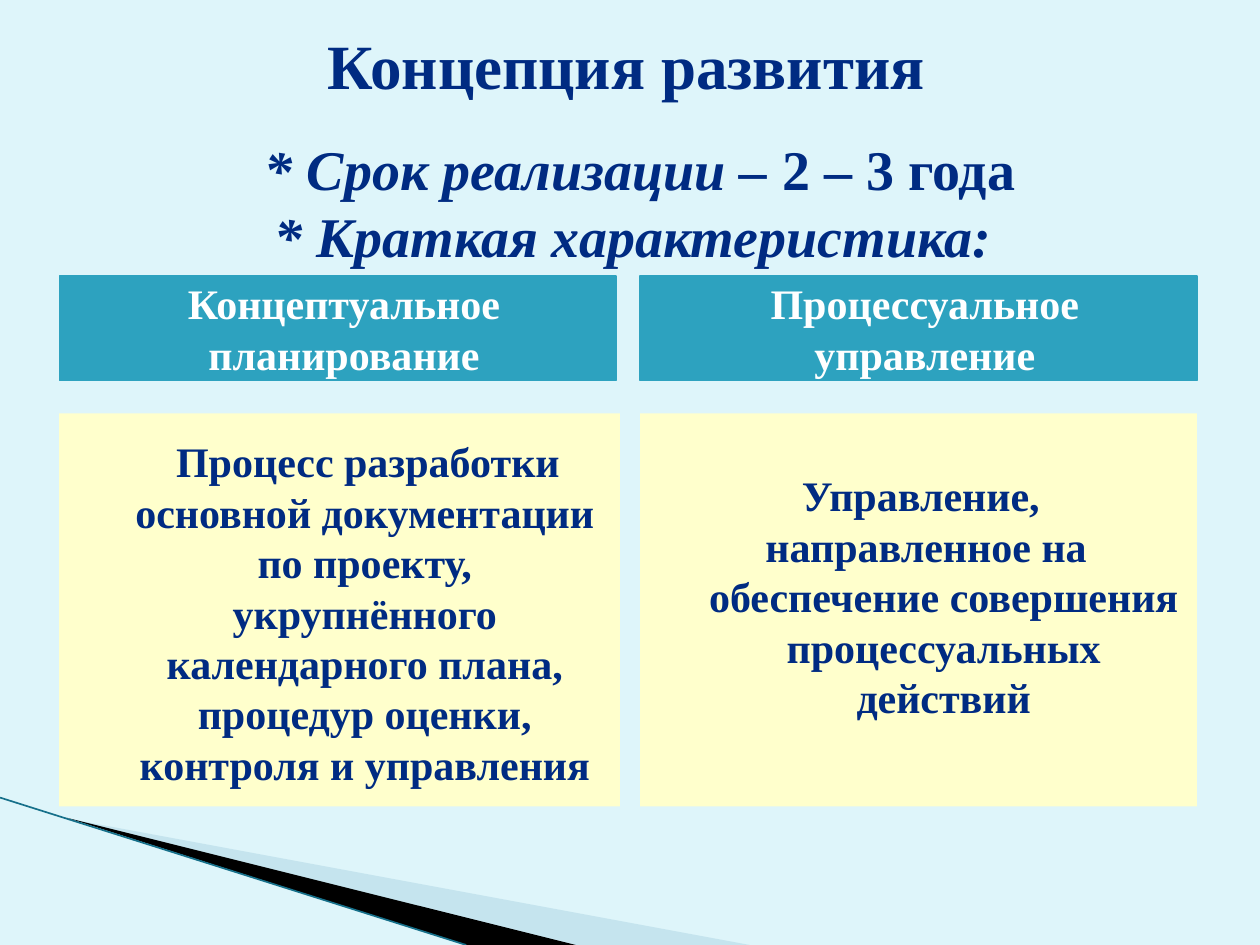
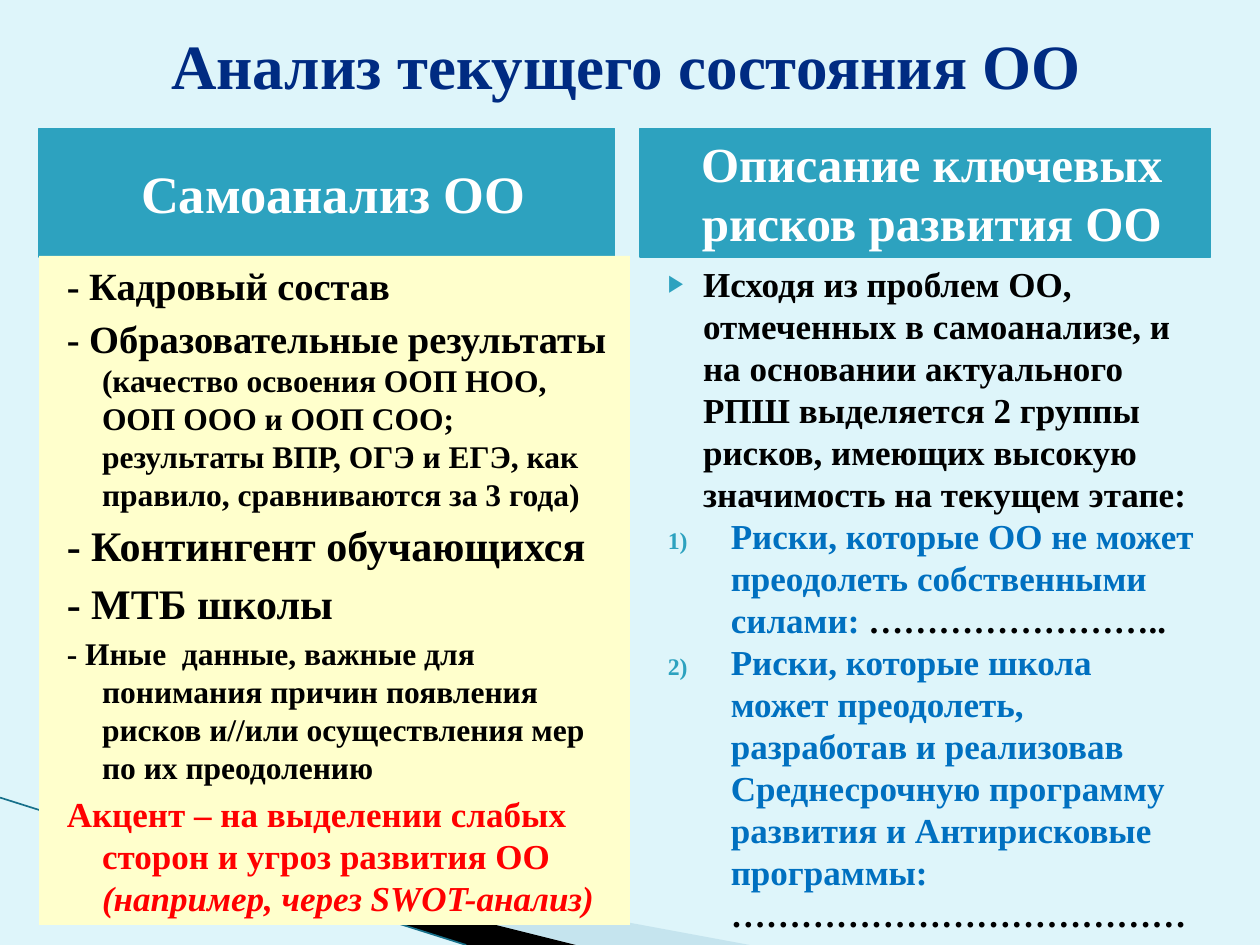
from lxml import etree
from pptx import Presentation
from pptx import util as u
from pptx.dml.color import RGBColor
from pptx.enum import shapes, text
from pptx.oxml.ns import qn

FONT = "Times New Roman"
NAVY, TEAL, CREAM, SKY = "002B82", "2DA2BF", "FFFFCC", "DEF5FA"
WHITE, BLACK, RED, BLUE = "FFFFFF", "000000", "FF0000", "0070C0"
CENTER, LEFT = text.PP_ALIGN.CENTER, text.PP_ALIGN.LEFT
MIDDLE, TOP = text.MSO_ANCHOR.MIDDLE, text.MSO_ANCHOR.TOP

# Shared geometry, inches
W, H = 10, 7.5
MARGIN, BAND = 0.47, 1.02
RIGHT_COL = 5.08
HANG, NUMBERED, LEAD_IN = (0.4, -0.28), (0.62, -0.5), (0.4, 0.05)
HEAD_INSETS = (0.2, 0.05, 0.1, 0.05)

WEDGES = [  # points, colour, opacity in percent
    ([(0.55, 6.5), (5.95, 7.5), (4.56, 7.5)], "A0CBDC", 40),
    ([(0.53, 6.49), (4.57, 7.5), (3.7, 7.5)], BLACK, 100),
]
EDGE = ((0, 6.33), (3.7, 7.5), "16708A")

# Content: a paragraph is a list of runs (text, format) plus options
SUBTITLE = [
    dict(runs=[("* Срок реализации – ", dict(italic=True)), ("2 – 3 года", {})]),
    dict(runs=[("* Краткая характеристика: ", dict(italic=True))]),
]

SLIDES = [
    dict(
        title="Концепция развития",
        subtitle=SUBTITLE,
        heads=[
            dict(at=(MARGIN, 2.19, 4.42, 0.83), size=24, text="Концептуальное планирование"),
            dict(at=(RIGHT_COL, 2.19, 4.42, 0.83), size=24, text="Процессуальное управление"),
        ],
        bodies=[
            dict(at=(MARGIN, 3.28, 4.45, 3.12), fill=CREAM, top=0.18, size=24,
                 color=NAVY, align=CENTER, paras=[
                     dict(indent=LEAD_IN, runs=[
                         ("Процесс разработки основной документации по проекту, "
                          "укрупнённого календарного плана, процедур оценки, "
                          "контроля и управления", {})])]),
            dict(at=(RIGHT_COL, 3.28, 4.42, 3.12), fill=CREAM, top=0.45, size=24,
                 color=NAVY, align=CENTER, paras=[
                     dict(runs=[("Управление, ", {})]),
                     dict(runs=[("направленное на обеспечение совершения "
                                 "процессуальных действий", {})])]),
        ],
    ),
    dict(
        title="Анализ текущего состояния ОО",
        heads=[
            dict(at=(0.31, BAND, 4.57, BAND), size=30, text="Самоанализ ОО"),
            dict(at=(RIGHT_COL, BAND, 4.53, BAND), size=28,
                 text="Описание ключевых рисков развития ОО"),
        ],
        bodies=[
            dict(at=(0.31, 2.03, 4.69, 5.31), fill=CREAM, top=0.05, size=22,
                 color=BLACK, align=LEFT, gap=4, paras=[
                     dict(runs=[("- Кадровый состав", {})]),
                     dict(runs=[("- Образовательные результаты ", {}),
                                ("(качество освоения ООП НОО, ООП ООО и ООП СОО; "
                                 "результаты ВПР, ОГЭ и ЕГЭ, как правило, "
                                 "сравниваются за 3 года)", dict(size=18))]),
                     dict(runs=[("- Контингент обучающихся", dict(size=24))]),
                     dict(runs=[("- МТБ школы", dict(size=24))]),
                     dict(runs=[("- Иные  данные, важные для понимания причин появления "
                                 "рисков и//или осуществления мер по их преодолению",
                                 dict(size=18))]),
                     dict(runs=[("Акцент – на выделении слабых сторон и угроз развития ОО ",
                                 dict(size=20, color=RED)),
                                ("(например, через SWOT-анализ)",
                                 dict(size=20, color=RED, italic=True))])]),
            dict(at=(RIGHT_COL, 2.03, 4.53, 5.16), fill=None, top=0.05, size=20,
                 color=BLACK, align=LEFT, paras=[
                     dict(bullet=("buChar", "char", "▶"), runs=[
                         ("Исходя из проблем ОО, отмеченных в самоанализе, и на основании "
                          "актуального РПШ выделяется 2 группы рисков, имеющих высокую "
                          "значимость на текущем этапе:", {})]),
                     dict(bullet=("buAutoNum", "type", "arabicParenR"), indent=NUMBERED, runs=[
                         ("Риски, которые ОО не может преодолеть собственными силами: ",
                          dict(color=BLUE)), ("……………………..", {})]),
                     dict(bullet=("buAutoNum", "type", "arabicParenR"), indent=NUMBERED, runs=[
                         ("Риски, которые школа может преодолеть, разработав и реализовав "
                          "Среднесрочную программу развития и Антирисковые программы: ",
                          dict(color=BLUE)), ("…………………………………", {})])]),
        ],
    ),
]


def rgb(value):
    return RGBColor.from_string(value)


def paint(sp, fill, line=None):
    if fill:
        sp.fill.solid()
        sp.fill.fore_color.rgb = rgb(fill)
    else:
        sp.fill.background()
    if line:
        sp.line.color.rgb = rgb(line)
        sp.line.width = u.Pt(0.75)
    else:
        sp.line.fill.background()


def place(sp, at):
    for name, value in zip(("left", "top", "width", "height"), at):
        setattr(sp, name, u.Inches(value))


def set_bullet(p, indent, bullet):
    pPr = p._p.get_or_add_pPr()
    for name, value in zip(("marL", "indent"), indent):
        pPr.set(name, str(u.Inches(value)))
    if not bullet:
        etree.SubElement(pPr, qn("a:buNone"))
        return
    clr = etree.SubElement(pPr, qn("a:buClr"))
    etree.SubElement(clr, qn("a:srgbClr"), val=TEAL)
    etree.SubElement(pPr, qn("a:buSzPct"), val="68000")
    tag, key, value = bullet
    etree.SubElement(pPr, qn("a:" + tag)).set(key, value)


def write(sp, paras, size, color, align=CENTER, anchor=MIDDLE,
          insets=(0.1, 0.05, 0.1, 0.05), indent=(0, 0), gap=0):
    tf = sp.text_frame
    frame = dict(word_wrap=True, auto_size=text.MSO_AUTO_SIZE.NONE, vertical_anchor=anchor)
    sides = ("margin_left", "margin_top", "margin_right", "margin_bottom")
    frame.update(zip(sides, map(u.Inches, insets)))
    for name, value in frame.items():
        setattr(tf, name, value)
    for i, para in enumerate(paras):
        p = tf.add_paragraph() if i else tf.paragraphs[0]
        set_bullet(p, para.get("indent", indent), para.get("bullet"))
        p.alignment = align
        p.space_before = u.Pt(gap if i else 0)
        for words, own in para["runs"]:
            r = p.add_run()
            r.text = words
            fmt = dict(name=FONT, bold=True, italic=own.get("italic", False),
                       size=u.Pt(own.get("size", size)))
            for name, value in fmt.items():
                setattr(r.font, name, value)
            r.font.color.rgb = rgb(own.get("color", color))


def plain(words):
    return [dict(runs=[(words, {})])]


def decorate_master(prs, s):
    """Draw the corner wedges and move them to the back of the slide master."""
    parts = []
    for points, color, opacity in WEDGES:
        start, *rest = [tuple(map(u.Inches, pt)) for pt in points]
        fb = s.shapes.build_freeform(*start)
        fb.add_line_segments(rest, close=True)
        sp = fb.convert_to_shape()
        sp.shadow.inherit = False
        paint(sp, color)
        clr = sp._element.spPr.find(qn("a:solidFill"))[0]
        etree.SubElement(clr, qn("a:alpha"), val=str(opacity * 1000))
        parts.append(sp)
    start, end, color = EDGE
    edge = s.shapes.add_connector(shapes.MSO_CONNECTOR.STRAIGHT,
                                  *map(u.Inches, start + end))
    edge.line.color.rgb = rgb(color)
    edge.line.width = u.Pt(0.95)
    etree.SubElement(edge._element.spPr, qn("a:effectLst"))
    parts.append(edge)
    tree = prs.slide_master.shapes._spTree
    for i, sp in enumerate(parts):
        sp._element.xpath(".//p:cNvPr")[0].set("id", str(100 + i))
        tree.insert(2 + i, sp._element)


def build_slide(s, data):
    ph = {sp.placeholder_format.idx: sp for sp in s.placeholders}

    # Title
    place(ph[0], (MARGIN, 0, 9, BAND))
    write(ph[0], plain(data["title"]), 36, NAVY)

    # Two columns: heading band and body below it
    for col, (head, body) in enumerate(zip(data["heads"], data["bodies"])):
        band, box = ph[1 + 2 * col], ph[2 + 2 * col]
        place(band, head["at"])
        paint(band, TEAL, TEAL)
        write(band, plain(head["text"]), head["size"], WHITE, insets=HEAD_INSETS)
        place(box, body["at"])
        paint(box, body["fill"])
        write(box, body["paras"], body["size"], body["color"], body["align"], TOP,
              (0.1, body["top"], 0.1, 0.05), HANG, body.get("gap", 0))

    # Subtitle lines
    if "subtitle" in data:
        sp = s.shapes.add_textbox(*map(u.Inches, (MARGIN, BAND, 9.22, 1.18)))
        write(sp, data["subtitle"], 32, NAVY, anchor=TOP)


def main():
    prs = Presentation()
    prs.slide_width, prs.slide_height = u.Inches(W), u.Inches(H)
    fill = prs.slide_master.background.fill
    fill.solid()
    fill.fore_color.rgb = rgb(SKY)
    comparison = prs.slide_layouts.get_by_name("Comparison")
    for i, data in enumerate(SLIDES):
        s = prs.slides.add_slide(comparison)
        if i == 0:
            decorate_master(prs, s)
        build_slide(s, data)
    prs.save("out.pptx")


if __name__ == "__main__":
    main()
